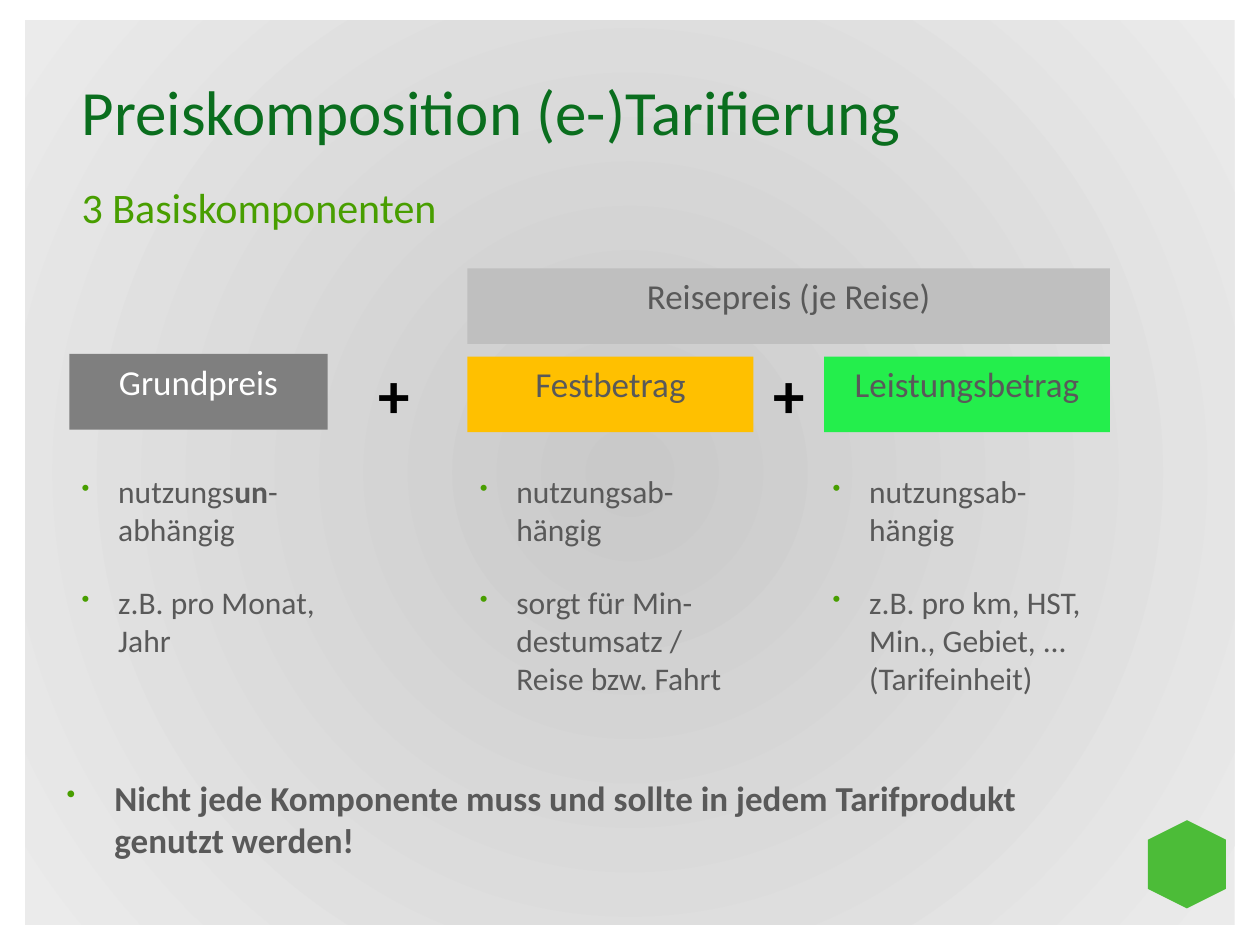
import pptx
import pptx.dml.color
import pptx.enum.shapes
import pptx.enum.text
import pptx.oxml
import pptx.oxml.ns
import pptx.util
from pptx.util import Inches

GREEN, DARK_GREEN, TEXT_GREY = "489E00", "0A6E1E", "595959"
CENTER = pptx.enum.text.PP_ALIGN.CENTER
SHAPES = pptx.enum.shapes.MSO_SHAPE


def rgb(value):
    return pptx.dml.color.RGBColor.from_string(value)


def xml(markup):
    """Parse one DrawingML element, given without its prefix declaration."""
    tag, rest = markup.split(" ", 1)
    return pptx.oxml.parse_xml(f"{tag} {pptx.oxml.ns.nsdecls('a')} {rest}")


class SlideBuilder:
    font_name = "Calibri"

    def __init__(self, slide):
        self.slide = slide

    def style(self, paragraph, size, color, bold=False, align=None):
        paragraph.alignment = align
        font = paragraph.font
        font.name, font.size, font.bold = self.font_name, pptx.util.Pt(size), bold
        font.color.rgb = rgb(color)

    def shape(self, preset, left, top, width, height):
        shape = self.slide.shapes.add_shape(
            preset, Inches(left), Inches(top), Inches(width), Inches(height))
        shape.shadow.inherit = False
        shape.line.fill.background()
        return shape

    def filled(self, preset, left, top, width, height, color):
        shape = self.shape(preset, left, top, width, height)
        shape.fill.solid()
        shape.fill.fore_color.rgb = rgb(color)
        return shape

    def radial_panel(self, left, top, width, height, inner, outer):
        panel = self.shape(SHAPES.RECTANGLE, left, top, width, height)
        panel.fill.gradient()
        for stop, color in zip(panel.fill.gradient_stops, (inner, outer)):
            stop.color.rgb = rgb(color)
        linear = panel.element.spPr.find(".//" + pptx.oxml.ns.qn("a:lin"))
        linear.getparent().replace(linear, xml(
            '<a:path path="circle"><a:fillToRect l="50000" t="50000" '
            'r="50000" b="50000"/></a:path>'))

    def label_box(self, left, top, width, text, fill, color=TEXT_GREY):
        box = self.filled(SHAPES.RECTANGLE, left, top, width, 0.6, fill)
        box.text_frame.vertical_anchor = pptx.enum.text.MSO_ANCHOR.TOP
        box.text_frame.text = text
        self.style(box.text_frame.paragraphs[0], 20, color, align=CENTER)

    def text_frame(self, left, top, width, height):
        frame = self.slide.shapes.add_textbox(
            Inches(left), Inches(top), Inches(width), Inches(height)).text_frame
        frame.word_wrap = True
        return frame

    def text(self, left, top, width, height, text, size, color, **style):
        frame = self.text_frame(left, top, width, height)
        frame.text = text
        self.style(frame.paragraphs[0], size, color, **style)

    def bullets(self, left, top, width, height, items, size, indent, bold=False):
        """Each item is a list of (text, bold) runs or a plain string."""
        frame = self.text_frame(left, top, width, height)
        for index, item in enumerate(items):
            paragraph = frame.paragraphs[0] if index == 0 else frame.add_paragraph()
            if index:
                paragraph.space_before = pptx.util.Pt(20)
            properties = paragraph._p.get_or_add_pPr()
            properties.set("marL", str(Inches(indent)))
            properties.set("indent", str(-Inches(indent)))
            properties.append(xml(f'<a:buClr ><a:srgbClr val="{GREEN}"/></a:buClr>'))
            properties.append(xml('<a:buSzPct val="74000"/>'))
            properties.append(xml('<a:buChar char="•"/>'))
            self.style(paragraph, size, TEXT_GREY, bold)
            for text, strong in [(item, bold)] if isinstance(item, str) else item:
                run = paragraph.add_run()
                run.text = text
                if strong != bold:
                    run.font.bold = strong


def main():
    presentation = pptx.Presentation()
    presentation.slide_width, presentation.slide_height = Inches(10), Inches(7.5)
    builder = SlideBuilder(presentation.slides.add_slide(presentation.slide_layouts[6]))

    # Background panel and plain corner emblem
    builder.radial_panel(0.2, 0.16, 9.6, 7.18, "C9C9C9", "EBEBEB")
    emblem = builder.filled(SHAPES.HEXAGON, 9.07, 6.55, 0.7, 0.62, "4CBC38")
    emblem.rotation = 90

    # Headings
    builder.text(0.55, 0.53, 8.26, 0.66, "Preiskomposition (e-)Tarifierung", 36, DARK_GREEN)
    builder.text(0.55, 1.39, 8.54, 0.47, "3 Basiskomponenten", 24, GREEN)

    # Price components
    builder.label_box(3.71, 2.13, 5.1, "Reisepreis (je Reise)", "BFBFBF")
    builder.label_box(0.55, 2.81, 2.05, "Grundpreis", "7F7F7F", "FFFFFF")
    builder.label_box(3.71, 2.83, 2.27, "Festbetrag", "FFC000")
    builder.label_box(6.54, 2.83, 2.27, "Leistungsbetrag", "24EE4C")
    for plus_left in (2.79, 5.92):
        builder.text(plus_left, 2.77, 0.68, 0.71, "+", 36, "000000", bold=True, align=CENTER)

    # Explanation of each component
    explanations = [
        (0.55, 2.13, [[("nutzungs", False), ("un", True), ("-abhängig", False)],
                      "z.B. pro Monat, Jahr"]),
        (3.71, 2.27, ["nutzungsab-hängig",
                      "sorgt für Min-destumsatz / Reise bzw. Fahrt"]),
        (6.51, 2.27, ["nutzungsab-hängig",
                      "z.B. pro km, HST, Min., Gebiet, ... (Tarifeinheit)"]),
    ]
    for left, width, items in explanations:
        builder.bullets(left, 3.7, width, 1.22, items, 18, 0.29)

    # Conclusion
    builder.bullets(0.43, 6.11, 8.65, 0.61,
                    ["Nicht jede Komponente muss und sollte in jedem Tarifprodukt "
                     "genutzt werden!"], 20, 0.38, bold=True)

    presentation.save("out.pptx")


if __name__ == "__main__":
    main()
